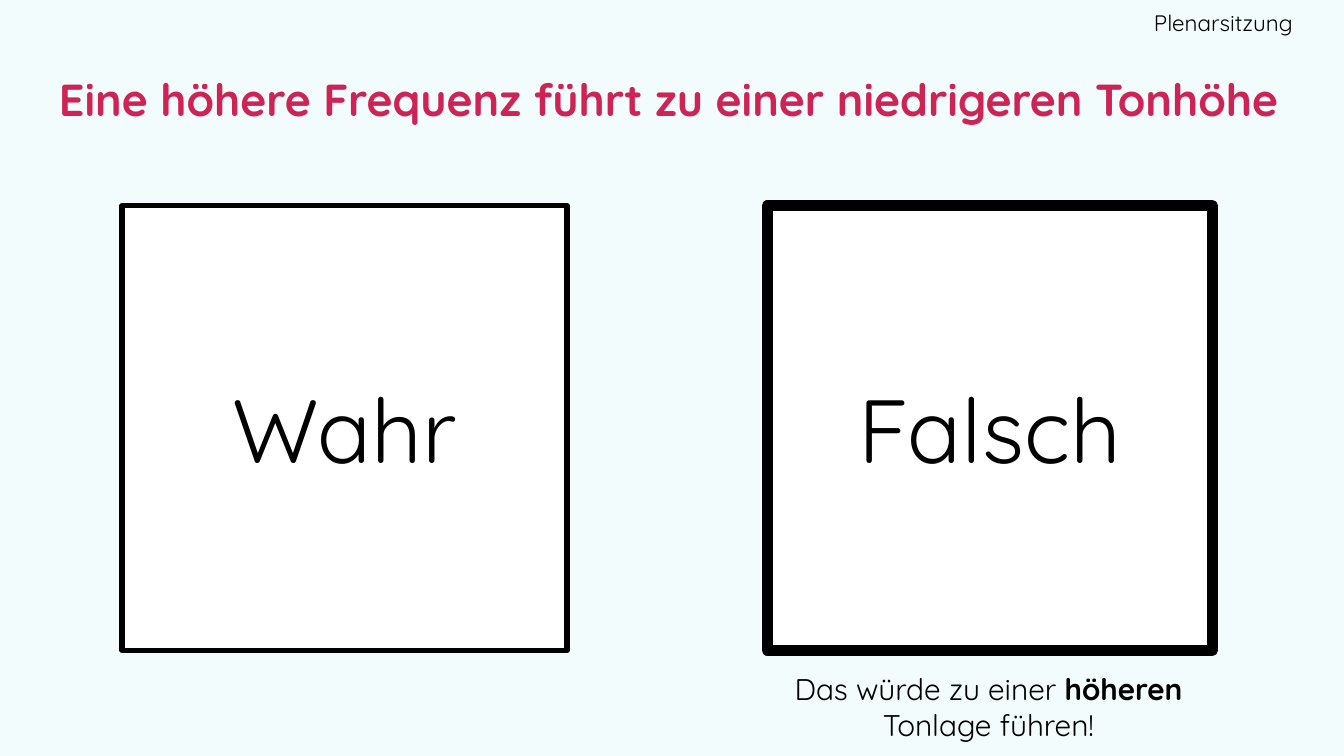
"""Build a true-or-false slide about frequency and pitch."""
import pptx
import pptx.dml.color
import pptx.enum.shapes
import pptx.enum.text
import pptx.util
from lxml import etree

BACKGROUND = pptx.dml.color.RGBColor(0xF2, 0xFC, 0xFC)
WHITE = pptx.dml.color.RGBColor(0xFF, 0xFF, 0xFF)
BLACK = pptx.dml.color.RGBColor(0x00, 0x00, 0x00)
CRIMSON = pptx.dml.color.RGBColor(0xCD, 0x23, 0x55)

ALIGN = pptx.enum.text.PP_ALIGN
ANCHOR = pptx.enum.text.MSO_ANCHOR

presentation = pptx.Presentation()
presentation.slide_width = pptx.util.Inches(10)
presentation.slide_height = presentation.slide_width * 9 // 16
slide = presentation.slides.add_slide(presentation.slide_layouts[6])
slide.background.fill.solid()
slide.background.fill.fore_color.rgb = BACKGROUND
GRID = presentation.slide_width / 100


def place(left, top, width, height):
    return [round(GRID * units) for units in (left, top, width, height)]


def write(shape, runs, size, color, alignment, anchor, margins):
    frame = shape.text_frame
    sides = ("margin_left", "margin_top", "margin_right", "margin_bottom")
    frame_format = {"word_wrap": True, "vertical_anchor": anchor}
    frame_format.update(zip(sides, place(*margins)))
    for name, value in frame_format.items():
        setattr(frame, name, value)
    paragraph = frame.paragraphs[0]
    paragraph.alignment = alignment
    for text, bold in runs:
        run = paragraph.add_run()
        run.text = text
        font_format = {"name": "Quicksand", "size": pptx.util.Pt(size), "bold": bold}
        for name, value in font_format.items():
            setattr(run.font, name, value)
        run.font.color.rgb = color


title = slide.shapes.add_textbox(*place(3.4, 3.4, 93.2, 7.8))
write(title, [("Eine höhere Frequenz führt zu einer niedrigeren Tonhöhe", True)],
      24, CRIMSON, ALIGN.LEFT, ANCHOR.MIDDLE, (1, 1, 1, 1))

for column, (answer, line_width) in enumerate([("Wahr", 3), ("Falsch", 6)]):
    box = slide.shapes.add_shape(pptx.enum.shapes.MSO_SHAPE.RECTANGLE,
                                 *place(9.1 + 48 * column, 15.3, 33.1, 33.1))
    box.shadow.inherit = False
    box.fill.solid()
    box.fill.fore_color.rgb = WHITE
    box.line.color.rgb = BLACK
    box.line.width = pptx.util.Pt(line_width)
    etree.SubElement(box.line._get_or_add_ln(), pptx.oxml.ns.qn("a:round"))
    write(box, [(answer, False)], 48, BLACK, ALIGN.CENTER, ANCHOR.MIDDLE,
          (0.5, 0.5, 0.5, 0.5))

explanation = slide.shapes.add_textbox(*place(55.3, 48.9, 36.5, 4.7))
write(explanation,
      [("Das würde zu einer ", False), ("höheren ", True), ("Tonlage führen!", False)],
      16, BLACK, ALIGN.CENTER, ANCHOR.TOP, (1, 1, 1, 1))

session_label = slide.shapes.add_textbox(*place(74.8, 0, 21.4, 3.4))
write(session_label, [("Plenarsitzung", False)], 12, BLACK, ALIGN.RIGHT,
      ANCHOR.MIDDLE, (1, 1, 0, 1))

presentation.save("out.pptx")
